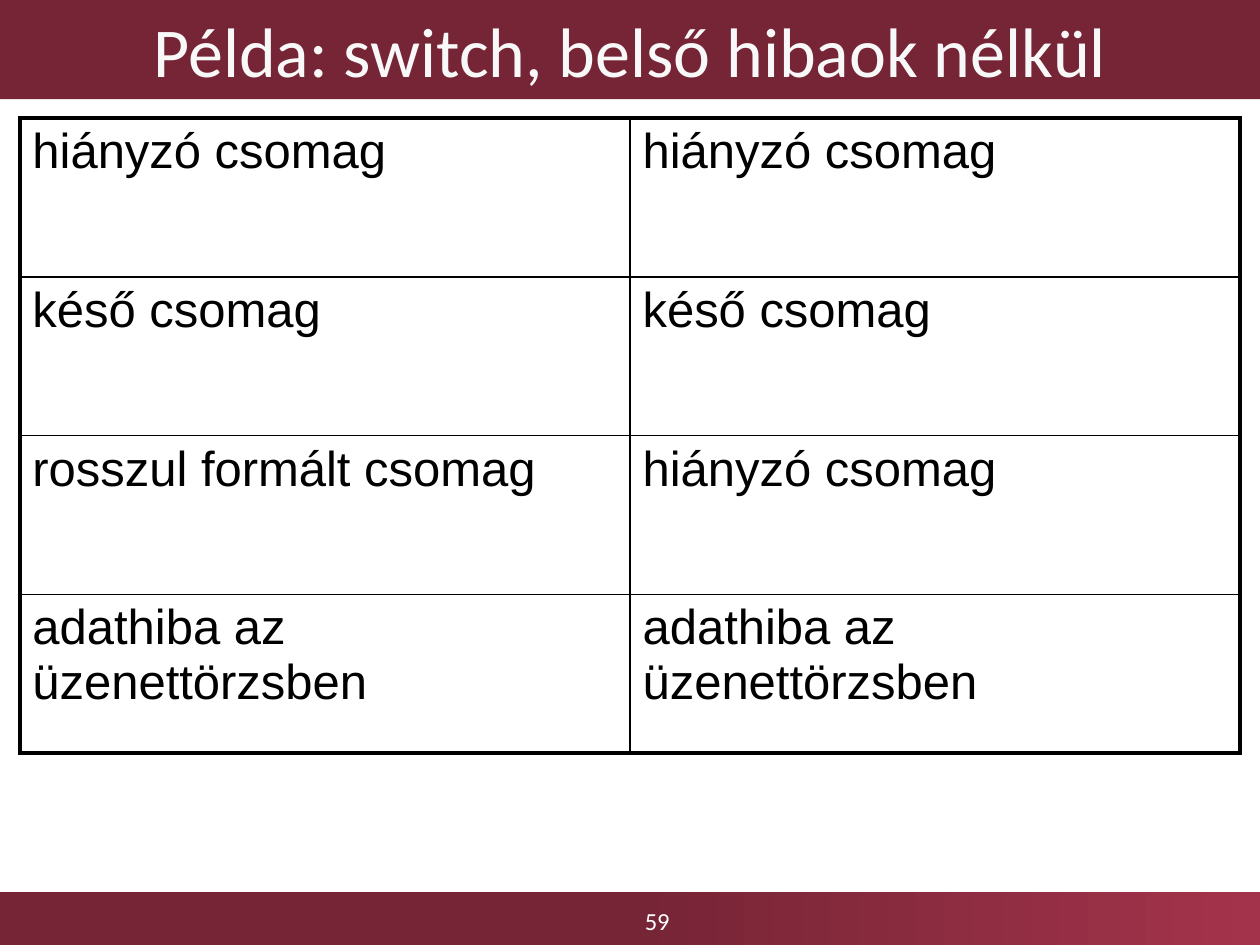
from lxml import etree
from pptx import Presentation
from pptx.dml.color import RGBColor
from pptx.enum.shapes import MSO_SHAPE
from pptx.enum.text import MSO_ANCHOR, PP_ALIGN
from pptx.oxml.ns import qn
from pptx.util import Cm, Pt

BURGUNDY = RGBColor(0x76, 0x25, 0x36)
CRIMSON = RGBColor(0xA3, 0x33, 0x4B)
WHITE = RGBColor(0xFF, 0xFF, 0xFF)
OFF_WHITE = RGBColor(0xF8, 0xF8, 0xF8)
BLACK = RGBColor(0, 0, 0)

FAULT_ROWS = [
    ("hiányzó csomag", "hiányzó csomag"),
    ("késő csomag", "késő csomag"),
    ("rosszul formált csomag", "hiányzó csomag"),
    ("adathiba az üzenettörzsben", "adathiba az üzenettörzsben"),
]
THIN, THICK = Pt(1), Pt(2.25)


def write_text(text_frame, text, font_name, size, color, alignment):
    text_frame.text = text
    text_frame.word_wrap = True
    paragraph = text_frame.paragraphs[0]
    paragraph.alignment = alignment
    font = paragraph.runs[0].font
    font.name, font.size = font_name, Pt(size)
    font.color.rgb = color


def add_border(cell, side, width):
    """Draw one black cell border; side is L, R, T or B."""
    line = etree.SubElement(cell._tc.get_or_add_tcPr(), qn(f"a:ln{side}"), w=str(width))
    fill = etree.SubElement(line, qn("a:solidFill"))
    etree.SubElement(fill, qn("a:srgbClr"), val=str(BLACK))


presentation = Presentation()
presentation.slide_width, presentation.slide_height = Cm(25.4), Cm(19.05)
slide = presentation.slides.add_slide(presentation.slide_layouts[6])

# Footer band and page number
footer = slide.shapes.add_shape(MSO_SHAPE.RECTANGLE, Cm(0), Cm(17.98), Cm(25.4), Cm(1.07))
footer.shadow.inherit = False
footer.line.fill.background()
footer.fill.gradient()
footer.fill.gradient_angle = 0
for stop, position, color in zip(footer.fill.gradient_stops, (0.5, 1), (BURGUNDY, CRIMSON)):
    stop.position = position
    stop.color.rgb = color

page_number = slide.shapes.add_textbox(Cm(9.12), Cm(18.06), Cm(8.26), Cm(0.99))
page_number.text_frame.vertical_anchor = MSO_ANCHOR.MIDDLE
write_text(page_number.text_frame, "59", "Calibri", 14, WHITE, PP_ALIGN.CENTER)

# Title band
title = slide.shapes.add_shape(MSO_SHAPE.RECTANGLE, Cm(0), Cm(0), Cm(25.4), Cm(2))
title.shadow.inherit = False
title.line.fill.background()
title.fill.solid()
title.fill.fore_color.rgb = BURGUNDY
title.text_frame.vertical_anchor = MSO_ANCHOR.MIDDLE
write_text(title.text_frame, "Példa: switch, belső hibaok nélkül", "Calibri", 40,
           OFF_WHITE, PP_ALIGN.CENTER)

# Fault table: thick outer frame, thin inner lines
row_count, column_count = len(FAULT_ROWS), len(FAULT_ROWS[0])
table = slide.shapes.add_table(row_count, column_count, Cm(0.4), Cm(2.38),
                               Cm(24.6), Cm(12.8)).table
table.first_row = table.horz_banding = False
for row_index, row in enumerate(FAULT_ROWS):
    for column_index, text in enumerate(row):
        cell = table.cell(row_index, column_index)
        outer_sides = {
            "L": column_index == 0,
            "R": column_index == column_count - 1,
            "T": row_index == 0,
            "B": row_index == row_count - 1,
        }
        for side, is_outer in outer_sides.items():
            add_border(cell, side, THICK if is_outer else THIN)
        cell.fill.background()
        write_text(cell.text_frame, text, "Arial", 28, BLACK, PP_ALIGN.LEFT)

presentation.save("out.pptx")
